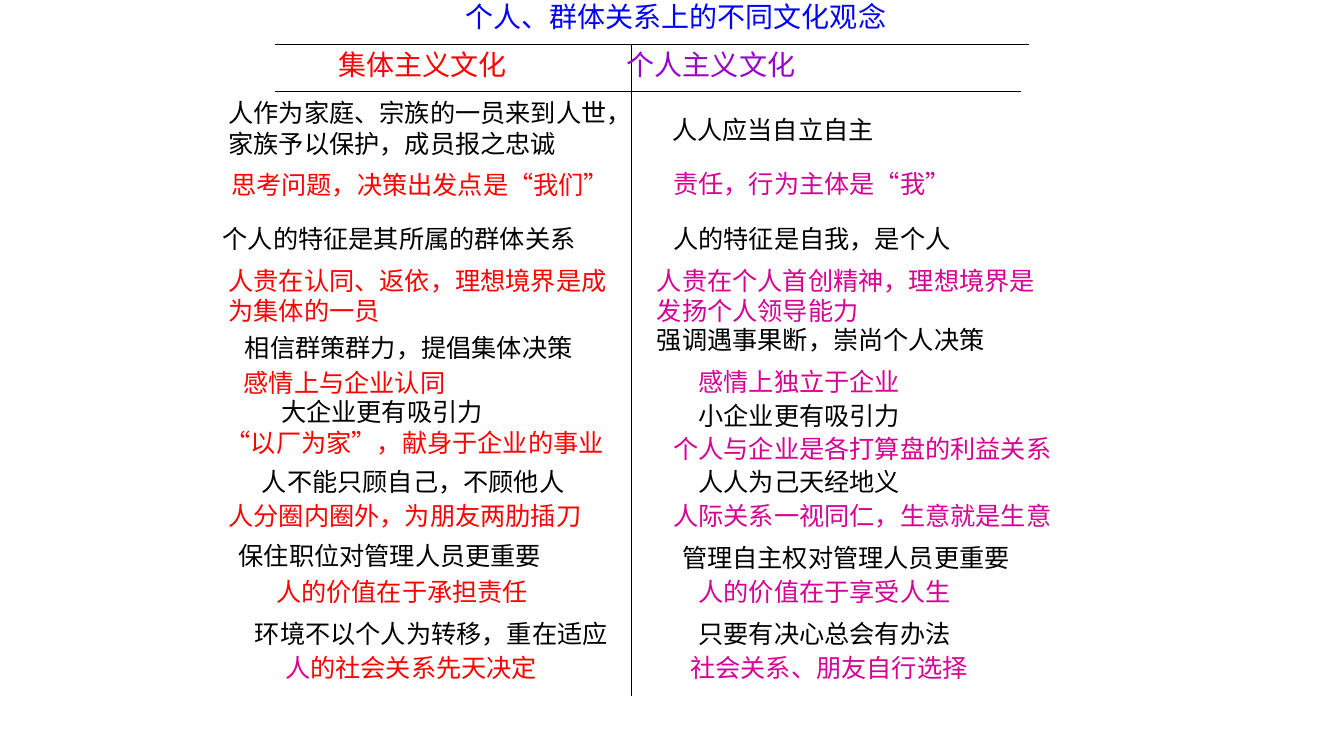
import pptx
import pptx.util
import pptx.dml.color
import pptx.enum.shapes
import pptx.enum.text
import pptx.oxml.ns
from lxml import etree

Pt = pptx.util.Pt
COLOURS = {"black": "000000", "red": "FF0000", "pink": "D60093",
           "purple": "9900CC", "blue": "0000FF", "white": "FFFFFF"}
BODY_FONT, HEADING_FONT = "DejaVu Sans", "Noto Sans CJK SC"
BODY_SIZE, HEADING_SIZE = 18, 20
INSET_X, INSET_Y = 14.4, 7.2
COLUMN_LIMIT = 292
SLACK = 4

HEADINGS = [
    (325.4, -3.6, "个人、群体关系上的不同文化观念", "blue", BODY_FONT),
    (234.7, 30.2, "集体主义文化", "red", HEADING_FONT),
    (440.7, 30.2, "个人主义文化", "purple", HEADING_FONT),
]
RULES = [(196.6, 31.7, 735.1, 31.7), (451.4, 31.7, 451.4, 496.8), (196.6, 65.5, 729.4, 65.5)]
COLLECTIVIST = [
    (156.2, 66.2, "人作为家庭、宗族的一员来到人世，家族予以保护，成员报之忠诚"),
    (168, 114, "思考问题，决策出发点是“我们”"),
    (152, 156.2, "个人的特征是其所属的群体关系"),
    (156.2, 185.8, "人贵在认同、返依，理想境界是成\n为集体的一员"),
    (167.8, 234, "相信群策群力，提倡集体决策"),
    (167, 258.5, "感情上与企业认同"),
    (193.7, 279.4, "大企业更有吸引力"),
    (154.1, 305.3, "“以厂为家”，献身于企业的事业"),
    (180, 329.8, "人不能只顾自己，不顾他人"),
    (156.2, 353.5, "人分圈内圈外，为朋友两肋插刀"),
    (163.4, 382.3, "保住职位对管理人员更重要"),
    (190.1, 408.2, "人的价值在于承担责任"),
    (175, 437.8, "环境不以个人为转移，重在适应"),
    (196.6, 462.2, "人的社会关系先天决定"),
]
INDIVIDUALIST = [
    (473, 77.8, "人人应当自立自主"),
    (473.8, 120.2, "责任，行为主体是“我”"),
    (473.8, 156.2, "人的特征是自我，是个人"),
    (462.2, 185.8, "人贵在个人首创精神，理想境界是\n发扬个人领导能力"),
    (462.2, 228.2, "强调遇事果断，崇尚个人决策"),
    (491.8, 257.8, "感情上独立于企业"),
    (491.8, 282.2, "小企业更有吸引力"),
    (473.8, 306, "个人与企业是各打算盘的利益关系"),
    (491.8, 329.8, "人人为己天经地义"),
    (473.8, 354.2, "人际关系一视同仁，生意就是生意"),
    (480.2, 383.8, "管理自主权对管理人员更重要"),
    (491.8, 408.2, "人的价值在于享受人生"),
    (491.8, 437.8, "只要有决心总会有办法"),
    (486, 462.2, "社会关系、朋友自行选择"),
]
FRAMED_TEXT = COLLECTIVIST[1][2]
FRAMED_SIZE = (264, 36)
TWO_TONE_TEXT = COLLECTIVIST[-1][2]


def rgb(name):
    return pptx.dml.color.RGBColor.from_string(COLOURS[name])


def add_run(paragraph, text, colour, size, font):
    run = paragraph.add_run()
    run.text = text
    run.font.size = Pt(size)
    run.font.name = font
    run.font.color.rgb = rgb(colour)
    east_asian = etree.SubElement(run.font._element, pptx.oxml.ns.qn("a:ea"))
    east_asian.set("typeface", HEADING_FONT if "“" in text else BODY_FONT)


def add_statement(slide, x, y, text, colour, size=BODY_SIZE, font=BODY_FONT):
    lines = text.split("\n")
    longest = max(len(line) for line in lines) * size
    two_rows = longest > 2 * COLUMN_LIMIT - 100
    quoted = "“" in text
    rows = 2 if two_rows else len(lines)
    width = (COLUMN_LIMIT if two_rows else longest + SLACK) + INSET_X
    box = slide.shapes.add_textbox(Pt(x), Pt(y), Pt(width), Pt(rows * size * 1.2 + INSET_Y))
    frame = box.text_frame
    frame.word_wrap = two_rows or quoted
    frame.auto_size = pptx.enum.text.MSO_AUTO_SIZE.SHAPE_TO_FIT_TEXT
    if quoted:
        frame.margin_top = frame.margin_bottom = Pt(0)
    for index, line in enumerate(lines):
        paragraph = frame.add_paragraph() if index else frame.paragraphs[0]
        runs = [(line[:1], "pink"), (line[1:], colour)] if text == TWO_TONE_TEXT else [(line, colour)]
        for part, part_colour in runs:
            add_run(paragraph, part, part_colour, size, font)


def add_framed_statement(slide, x, y, text, colour):
    panel = slide.shapes.add_shape(pptx.enum.shapes.MSO_SHAPE.RECTANGLE,
                                   Pt(x), Pt(y), *map(Pt, FRAMED_SIZE))
    panel.shadow.inherit = False
    panel.fill.solid()
    panel.fill.fore_color.rgb = rgb("white")
    panel.line.color.rgb = rgb("white")
    panel.line.width = Pt(0.75)
    frame = panel.text_frame
    frame.word_wrap = False
    frame.vertical_anchor = pptx.enum.text.MSO_ANCHOR.MIDDLE
    frame.paragraphs[0].alignment = pptx.enum.text.PP_ALIGN.CENTER
    add_run(frame.paragraphs[0], text, colour, BODY_SIZE, HEADING_FONT)


def add_rule(slide, ends):
    rule = slide.shapes.add_connector(pptx.enum.shapes.MSO_CONNECTOR.STRAIGHT, *map(Pt, ends))
    rule.line.color.rgb = rgb("black")
    rule.line.width = Pt(0.75)
    etree.SubElement(rule._element.spPr, pptx.oxml.ns.qn("a:effectLst"))


def main():
    """Build the slide contrasting collectivist and individualist cultures."""
    deck = pptx.Presentation()
    deck.slide_width, deck.slide_height = Pt(960), Pt(540)
    slide = deck.slides.add_slide(deck.slide_layouts[6])
    for ends in RULES:
        add_rule(slide, ends)
    for x, y, text, colour, font in HEADINGS:
        add_statement(slide, x, y, text, colour, HEADING_SIZE, font)
    for column, accent in ((COLLECTIVIST, "red"), (INDIVIDUALIST, "pink")):
        for index, (x, y, text) in enumerate(column):
            colour = accent if index % 2 else "black"
            add = add_framed_statement if text == FRAMED_TEXT else add_statement
            add(slide, x, y, text, colour)
    deck.save("out.pptx")


if __name__ == "__main__":
    main()
